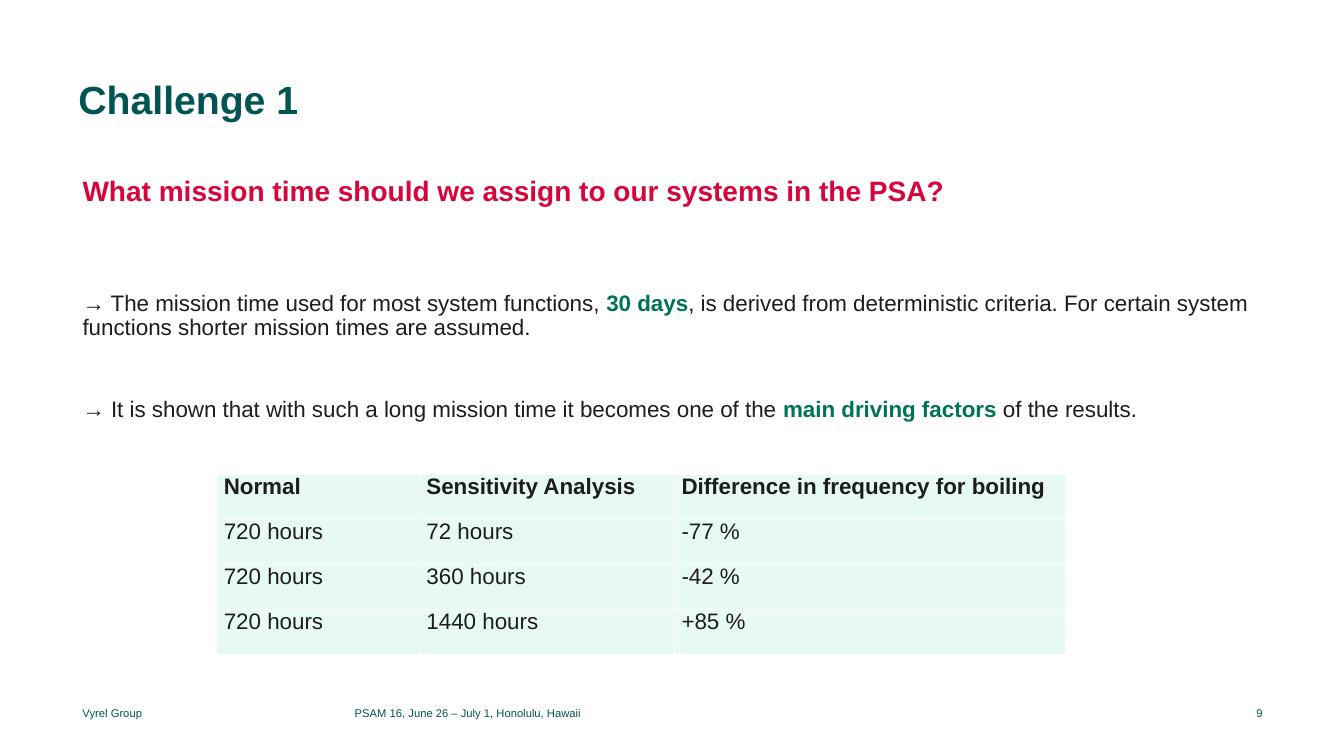
from lxml.etree import SubElement
from pptx import Presentation
from pptx.dml.color import RGBColor
from pptx.enum.text import MSO_ANCHOR, PP_ALIGN
from pptx.oxml.ns import qn
from pptx.util import Inches, Pt

TEAL = RGBColor(0x00, 0x54, 0x54)
GREEN = RGBColor(0x00, 0x72, 0x55)
RED = RGBColor(0xD6, 0x06, 0x3D)
INK = RGBColor(0x1D, 0x1D, 0x1B)
MINT = RGBColor(0xE7, 0xFA, 0xF1)
WHITE = RGBColor(0xFF, 0xFF, 0xFF)

LEFT = 0.72
STATEMENT_WIDTH = 11.89
FOOTER_TOP, FOOTER_HEIGHT = 6.96, 0.23

STATEMENTS = [
    (2.85, [("→ The mission time used for most system functions, ", False),
            ("30 days", True),
            (", is derived from deterministic criteria. For certain system "
             "functions shorter mission times are assumed.", False)]),
    (3.9, [("→ It is shown that with such a long mission time it becomes "
            "one of the ", False),
           ("main driving factors ", True),
           ("of the results.", False)]),
]
SENSITIVITY_ROWS = [
    ("Normal", "Sensitivity Analysis", "Difference in frequency for boiling"),
    ("720 hours", "72 hours", "-77 %"),
    ("720 hours", "360 hours", "-42 %"),
    ("720 hours", "1440 hours", "+85 %"),
]
COLUMN_WIDTHS = (2.01, 2.53, 3.88)
ROW_HEIGHT = 0.445


class SlideBuilder:
    font_name = "Arial"

    def __init__(self, slide):
        self.slide = slide

    def run(self, p, text, size, color, bold=False):
        r = p.add_run()
        r.text = text
        r.font.name = self.font_name
        r.font.size = Pt(size)
        r.font.color.rgb = color
        r.font.bold = bold

    def text(self, box, runs, size, align=PP_ALIGN.LEFT, spacing=None,
             anchor=MSO_ANCHOR.TOP, inset_top=0.05):
        """Add a text box; runs are (text, color, bold) tuples."""
        sp = self.slide.shapes.add_textbox(*map(Inches, box))
        tf = sp.text_frame
        tf.word_wrap = True
        tf.vertical_anchor = anchor
        tf.margin_top = Inches(inset_top)
        p = tf.paragraphs[0]
        p.alignment = align
        p.line_spacing = spacing
        for text, color, bold in runs:
            self.run(p, text, size, color, bold)

    def footer(self, left, width, text, align=PP_ALIGN.LEFT):
        self.text((left, FOOTER_TOP, width, FOOTER_HEIGHT),
                  [(text, TEAL, False)], 8, align, anchor=MSO_ANCHOR.MIDDLE)

    def borders(self, cell, color, width):
        tc_pr = cell._tc.get_or_add_tcPr()
        for side in ("lnL", "lnR", "lnT", "lnB"):
            ln = SubElement(tc_pr, qn(f"a:{side}"), w=str(Pt(width)))
            fill = SubElement(ln, qn("a:solidFill"))
            SubElement(fill, qn("a:srgbClr"), val=str(color))

    def table(self, left, top, widths, row_height, rows):
        """Add a table whose first row is bold."""
        frame = self.slide.shapes.add_table(
            len(rows), len(widths), Inches(left), Inches(top),
            Inches(sum(widths)), Inches(row_height * len(rows)))
        table = frame.table
        table.first_row = table.horz_banding = False
        for column, width in zip(table.columns, widths):
            column.width = Inches(width)
        for i, values in enumerate(rows):
            table.rows[i].height = Inches(row_height)
            for j, value in enumerate(values):
                cell = table.cell(i, j)
                cell.margin_left = cell.margin_right = Inches(0.07)
                cell.margin_top = cell.margin_bottom = 0
                self.borders(cell, WHITE, 1)
                cell.fill.solid()
                cell.fill.fore_color.rgb = MINT
                self.run(cell.text_frame.paragraphs[0], value, 16, INK,
                         bold=i == 0)


def main():
    prs = Presentation()
    prs.slide_width, prs.slide_height = Inches(13.33), Inches(7.5)
    s = SlideBuilder(prs.slides.add_slide(prs.slide_layouts[6]))

    s.text((0.68, 0.65, 11.93, 0.77), [("Challenge 1", TEAL, True)], 28,
           inset_top=0.1)
    s.footer(LEFT, 1.43, "Vyrel Group")
    s.footer(3.42, 3.86, "PSAM 16, June 26 – July 1, Honolulu, Hawaii")
    s.footer(11, 1.62, "9", PP_ALIGN.RIGHT)

    s.text((LEFT, 1.71, 8.95, 0.77),
           [("What mission time should we assign to our systems in the PSA?",
             RED, True)], 20, spacing=0.9)
    for top, parts in STATEMENTS:
        runs = [(text, GREEN if key else INK, key) for text, key in parts]
        s.text((LEFT, top, STATEMENT_WIDTH, 0.9), runs, 16, spacing=0.9)

    s.table(2.15, 4.71, COLUMN_WIDTHS, ROW_HEIGHT, SENSITIVITY_ROWS)
    prs.save("out.pptx")


if __name__ == "__main__":
    main()
